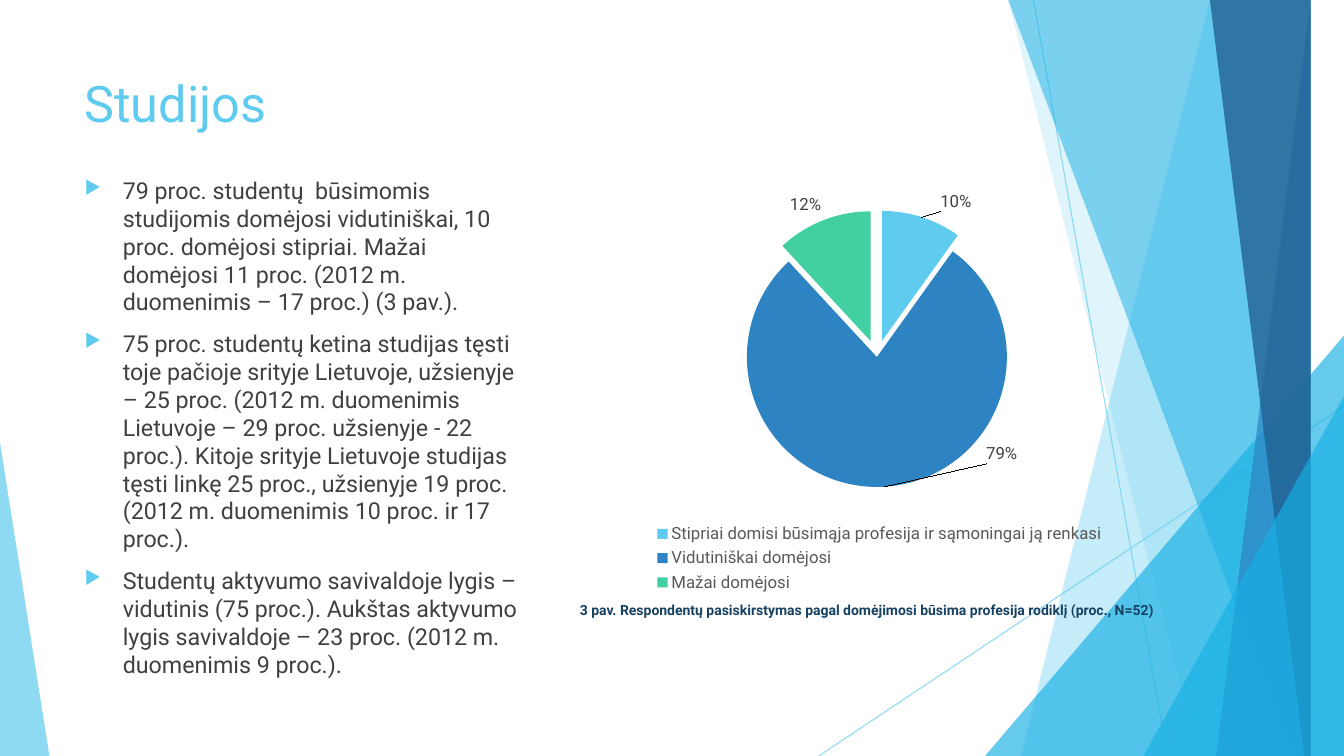
from lxml import etree
from pptx import Presentation
from pptx.chart.data import CategoryChartData
from pptx.dml.color import RGBColor
from pptx.enum.chart import XL_CHART_TYPE, XL_LABEL_POSITION, XL_LEGEND_POSITION
from pptx.enum.shapes import MSO_CONNECTOR, MSO_SHAPE
from pptx.enum.text import PP_ALIGN
from pptx.oxml import parse_xml
from pptx.oxml.ns import nsdecls, qn
from pptx.util import Inches, Pt


def paint(color_format, color, opacity=100):
    color_format.rgb = RGBColor.from_string(color)
    if opacity < 100:
        for element in color_format._xFill.iter(qn("a:srgbClr")):
            etree.SubElement(element, qn("a:alpha"), val=str(opacity * 1000))


def manual_layout(**values):
    items = "".join(f'<c:{name} val="{value}"/>' for name, value in values.items())
    return parse_xml(
        f'<c:layout {nsdecls("c")}><c:manualLayout>{items}</c:manualLayout></c:layout>'
    )


presentation = Presentation()
presentation.slide_width = Inches(13.33)
presentation.slide_height = Inches(7.5)
slide = presentation.slides.add_slide(presentation.slide_layouts[6])

for x1, y1, x2, y2 in [(10.25, 0, 11.58, 7.5), (13.33, 4.03, 8.12, 7.5)]:
    connector = slide.shapes.add_connector(
        MSO_CONNECTOR.STRAIGHT, Inches(x1), Inches(y1), Inches(x2), Inches(y2)
    )
    connector.line.width = Pt(0.75)
    connector.line.fill.solid()
    paint(connector.line.fill.fore_color, "5FCBEF", 70)
    etree.SubElement(connector._element.spPr, qn("a:effectLst"))

facets = [
    ("band", (12.28, 10.04), "5FCBEF", 36),
    ("band", (10.5, 11.83), "5FCBEF", 20),
    ("triangle", (9.77, 3.33, 3.56, 4.17, 1), "17B0E4", 66),
    ("band", (10.21, 12.91), "17B0E4", 50),
    ("band", (13.03, 11.92), "2E83C3", 70),
    ("band", (11.96, 13.18), "226292", 80),
    ("triangle", (11.34, 3.93, 1.99, 3.57, 1), "17B0E4", 66),
    ("triangle", (0, 4.39, 0.49, 3.11, 0), "5FCBEF", 70),
]
for kind, geometry, color, opacity in facets:
    if kind == "band":
        top_x, bottom_x = geometry
        builder = slide.shapes.build_freeform(top_x, -0.01, scale=Inches(1))
        builder.add_line_segments([(13.33, -0.01), (13.33, 7.5), (bottom_x, 7.5)])
        shape = builder.convert_to_shape()
    else:
        left, top, width, height, apex = geometry
        shape = slide.shapes.add_shape(
            MSO_SHAPE.ISOSCELES_TRIANGLE,
            Inches(left), Inches(top), Inches(width), Inches(height),
        )
        shape.adjustments[0] = apex
    shape.shadow.inherit = False
    shape.line.fill.background()
    shape.fill.solid()
    paint(shape.fill.fore_color, color, opacity)

body = [
    "79 proc. studentų  būsimomis studijomis domėjosi vidutiniškai, 10 proc. domėjosi "
    "stipriai. Mažai domėjosi 11 proc. (2012 m. duomenimis – 17 proc.) (3 pav.).",
    "75 proc. studentų ketina studijas tęsti toje pačioje srityje Lietuvoje, užsienyje – "
    "25 proc. (2012 m. duomenimis Lietuvoje – 29 proc. užsienyje - 22 proc.). Kitoje "
    "srityje Lietuvoje studijas tęsti linkę 25 proc., užsienyje 19 proc. (2012 m. "
    "duomenimis 10 proc. ir 17 proc.).",
    "Studentų aktyvumo savivaldoje lygis – vidutinis (75 proc.). Aukštas aktyvumo lygis "
    "savivaldoje – 23 proc. (2012 m. duomenimis 9 proc.).",
]
caption = (
    "3 pav. Respondentų pasiskirstymas pagal domėjimosi būsima profesija rodiklį "
    "(proc., N=52)"
)
texts = [
    ((0.74, 0.67, 9.4, 1.44), ["Studijos"], "5FCBEF",
     {"size": Pt(36)}, {}),
    ((0.74, 1.7, 4.58, 4.9), body, "404040",
     {"size": Pt(16.6)}, {"space_before": Pt(10), "line_spacing": Pt(19.9)}),
    ((5.26, 5.92, 6.67, 0.27), [caption], "174162",
     {"size": Pt(10), "bold": True}, {"alignment": PP_ALIGN.CENTER}),
]
for box, lines, color, font_format, paragraph_format in texts:
    text_frame = slide.shapes.add_textbox(*map(Inches, box)).text_frame
    text_frame.word_wrap = True
    text_frame.text = "\n".join(lines)
    for paragraph in text_frame.paragraphs:
        for name, value in paragraph_format.items():
            setattr(paragraph, name, value)
        font = paragraph.runs[0].font
        font.name = "Roboto"
        paint(font.color, color)
        for name, value in font_format.items():
            setattr(font, name, value)
        if lines is body:
            properties = paragraph._p.get_or_add_pPr()
            properties.set("marL", str(Inches(0.38)))
            properties.set("indent", str(Inches(-0.38)))
            bullet_color = etree.SubElement(properties, qn("a:buClr"))
            etree.SubElement(bullet_color, qn("a:srgbClr"), val="5FCBEF")
            etree.SubElement(properties, qn("a:buSzPct"), val="80000")
            etree.SubElement(properties, qn("a:buChar"), char="▶")

chart_data = CategoryChartData()
chart_data.categories = [
    "Stipriai domisi būsimąja profesija ir sąmoningai ją renkasi",
    "Vidutiniškai domėjosi",
    "Mažai domėjosi",
]
chart_data.add_series("Series 1", [10, 79, 12])
chart = slide.shapes.add_chart(
    XL_CHART_TYPE.PIE, Inches(5.92), Inches(1.89), Inches(5.5), Inches(4.03), chart_data
).chart
chart.has_title = False
chart.font.name = "Roboto"
chart.font.size = Pt(10)
chart.has_legend = True
legend = chart.legend
legend.position = XL_LEGEND_POSITION.BOTTOM
legend.include_in_layout = False
legend.font.name = "Roboto"
legend.font.size = Pt(12)
paint(legend.font.color, "595959")
legend._element.find(qn("c:legendPos")).addnext(
    manual_layout(xMode="edge", yMode="edge", x=0.09, y=0.81, w=0.84, h=0.19)
)

plot = chart.plots[0]
plot.vary_by_categories = True
plot_area = chart._chartSpace.chart.plotArea
for layout in plot_area.findall(qn("c:layout")):
    plot_area.remove(layout)
plot_area.insert(0, manual_layout(
    layoutTarget="inner", xMode="edge", yMode="edge", x=0.27, y=0.09, w=0.47, h=0.64
))

slices = [("5FCBEF", 13, 0.03, 0), ("2E83C3", 0, 0.21, -0.12), ("42D0A2", 13, 0, 0)]
for index, (color, explosion, shift_x, shift_y) in enumerate(slices):
    point = plot.series[0].points[index]
    point.format.fill.solid()
    paint(point.format.fill.fore_color, color)
    point.format.line.fill.background()
    data_point = plot.series[0]._element.findall(qn("c:dPt"))[index]
    data_point.find(qn("c:spPr")).addprevious(
        parse_xml(f'<c:explosion {nsdecls("c")} val="{explosion}"/>')
    )
    label = point.data_label
    label.font.name = "Roboto"
    label.font.size = Pt(12)
    paint(label.font.color, "404040")
    label.position = XL_LABEL_POSITION.OUTSIDE_END
    label_element = plot.series[0]._element.find(qn("c:dLbls")).findall(qn("c:dLbl"))[index]
    number_format = parse_xml(
        f'<c:numFmt {nsdecls("c")} formatCode="0&quot;%&quot;" sourceLinked="0"/>'
    )
    label_element.find(qn("c:idx")).addnext(number_format)
    if shift_x or shift_y:
        number_format.addprevious(manual_layout(x=shift_x, y=shift_y))

presentation.save("out.pptx")
